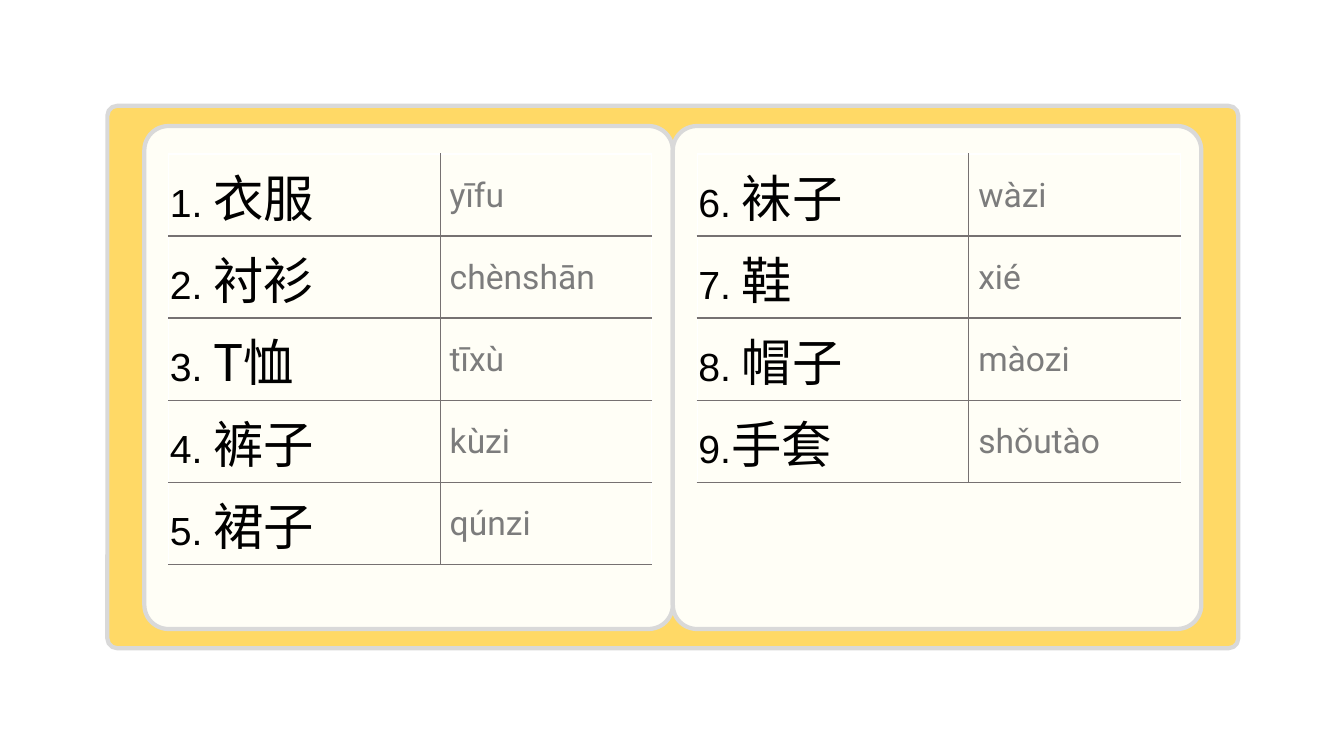
from lxml.etree import SubElement
from pptx import Presentation
from pptx.dml.color import RGBColor
from pptx.enum.shapes import MSO_SHAPE
from pptx.enum.text import MSO_ANCHOR
from pptx.oxml.ns import qn
from pptx.util import Pt

COVER = RGBColor(0xFF, 0xD9, 0x66)
PAPER = RGBColor(0xFF, 0xFE, 0xF6)
EDGE = RGBColor(0xD9, 0xD9, 0xD9)
RULE = RGBColor(0x76, 0x71, 0x71)
WHITE = RGBColor(0xFF, 0xFF, 0xFF)
BLACK = RGBColor(0x00, 0x00, 0x00)
PINYIN_GRAY = RGBColor(0x7C, 0x7C, 0x7C)

HANZI_FONT = "Noto Sans CJK SC"
ROW_HEIGHT = 58.6
HANZI_WIDTH, PINYIN_WIDTH = 194, 151

LEFT_WORDS = [
    ("1. ", "衣服", "yīfu"),
    ("2. ", "衬衫", "chènshān"),
    ("3. ", "T恤", "tīxù"),
    ("4. ", "裤子", "kùzi"),
    ("5. ", "裙子", "qúnzi"),
]
RIGHT_WORDS = [
    ("6. ", "袜子", "wàzi"),
    ("7. ", "鞋", "xié"),
    ("8. ", "帽子", "màozi"),
    ("9.", "手套", "shǒutào"),
]


def add_panel(shapes, left, top, width, height, corner, color):
    """Add one rounded panel with a gray edge."""
    panel = shapes.add_shape(
        MSO_SHAPE.ROUNDED_RECTANGLE, Pt(left), Pt(top), Pt(width), Pt(height))
    panel.adjustments[0] = corner
    panel.shadow.inherit = False
    panel.fill.solid()
    panel.fill.fore_color.rgb = color
    panel.line.color.rgb = EDGE
    panel.line.width = Pt(3)


def add_run(paragraph, text, font_name, size, color):
    """Append one formatted run, with its East Asian font."""
    run = paragraph.add_run()
    run.text = text
    run.font.name = font_name
    run.font.size = Pt(size)
    run.font.color.rgb = color
    SubElement(run.font._element, qn("a:ea"), typeface=font_name)


def set_borders(cell, left, right, top, bottom):
    """Draw the four cell borders in the given colours."""
    properties = cell._tc.get_or_add_tcPr()
    sides = zip(("a:lnL", "a:lnR", "a:lnT", "a:lnB"), (left, right, top, bottom))
    for position, (side, color) in enumerate(sides):
        border = SubElement(properties, qn(side), w=str(Pt(1)))
        fill = SubElement(border, qn("a:solidFill"))
        SubElement(fill, qn("a:srgbClr"), val=str(color))
        properties.insert(position, border)


def format_cell(cell, left_inset):
    """Clear the fill, set the insets and return the cell's paragraph."""
    cell.fill.background()
    cell.vertical_anchor = MSO_ANCHOR.MIDDLE
    cell.margin_left = Pt(left_inset)
    cell.margin_right = cell.margin_top = Pt(0.75)
    cell.margin_bottom = Pt(0)
    return cell.text_frame.paragraphs[0]


def add_word_list(shapes, left, top, words):
    """Add a ruled table of numbered words and their pinyin."""
    table = shapes.add_table(
        len(words), 2, Pt(left), Pt(top),
        Pt(HANZI_WIDTH + PINYIN_WIDTH), Pt(ROW_HEIGHT * len(words))).table
    table.first_row = table.horz_banding = False
    table.columns[0].width = Pt(HANZI_WIDTH)
    table.columns[1].width = Pt(PINYIN_WIDTH)
    for index, (number, hanzi, pinyin) in enumerate(words):
        table.rows[index].height = Pt(ROW_HEIGHT)
        word_cell, pinyin_cell = table.cell(index, 0), table.cell(index, 1)
        word = format_cell(word_cell, 0.75)
        add_run(word, number, "Arial", 28, BLACK)
        add_run(word, hanzi, HANZI_FONT, 36, BLACK)
        add_run(format_cell(pinyin_cell, 6.7), pinyin, "Roboto", 24, PINYIN_GRAY)
        above = RULE if index else WHITE
        set_borders(word_cell, WHITE, RULE, above, RULE)
        set_borders(pinyin_cell, RULE, WHITE, above, RULE)


def add_notebook(slide, left, top, width, height):
    """Add the open notebook with a word list on each page."""
    page_top, page_width = top + 14.4, 377.5
    page_lefts = [left + width / 2 + side * page_width for side in (-1, 0)]
    notebook = slide.shapes.add_group_shape().shapes
    add_panel(notebook, left, top, width, height, 0.018, COVER)
    for page_left in page_lefts:
        add_panel(notebook, page_left, page_top, page_width, 359.3, 0.048, PAPER)
    for page_left, words in zip(page_lefts, (LEFT_WORDS, RIGHT_WORDS)):
        add_word_list(slide.shapes, page_left + 17.5, page_top + 20, words)


def main():
    """Build and save the vocabulary slide."""
    deck = Presentation()
    deck.slide_width, deck.slide_height = Pt(960), Pt(540)
    slide = deck.slides.add_slide(deck.slide_layouts[6])
    add_notebook(slide, 76.7, 75.6, 807.8, 387.4)
    deck.save("out.pptx")


if __name__ == "__main__":
    main()
